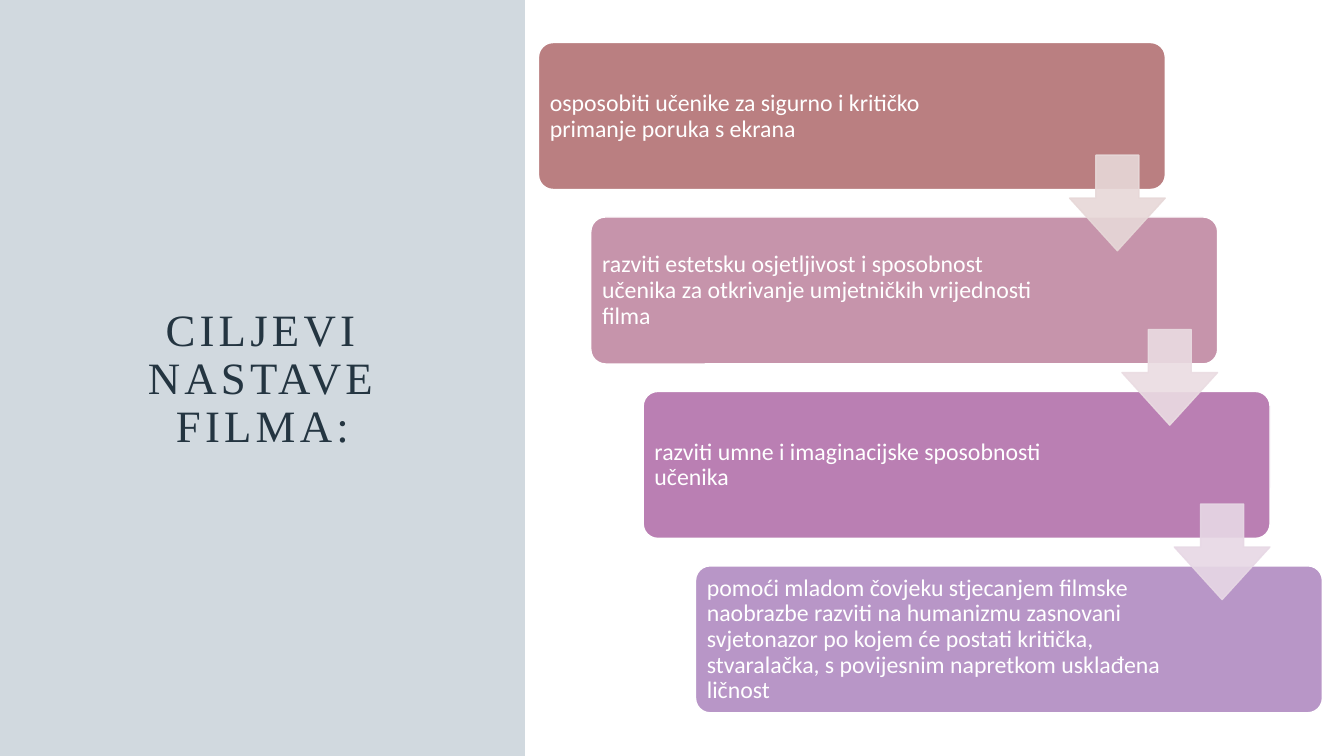
from lxml import etree
from pptx import Presentation
from pptx import util as u
from pptx.dml.color import RGBColor
from pptx.enum import shapes, text
from pptx.oxml import ns

WHITE = RGBColor(0xFF, 0xFF, 0xFF)
SLATE = RGBColor(0x48, 0x6B, 0x83)
INK = RGBColor(0x24, 0x35, 0x41)
ROSE = RGBColor(0xBA, 0x7F, 0x81)
PINK = RGBColor(0xC6, 0x94, 0xAB)
PLUM = RGBColor(0xBA, 0x7F, 0xB3)
LILAC = RGBColor(0xB8, 0x96, 0xC7)
PALE_ROSE = RGBColor(0xE7, 0xD8, 0xD8)
PALE_PINK = RGBColor(0xEA, 0xDC, 0xE2)
PALE_PLUM = RGBColor(0xE7, 0xD8, 0xE5)

GOALS = [
    ("osposobiti učenike za sigurno i kritičko primanje poruka s ekrana", ROSE, 325.4),
    ("razviti estetsku osjetljivost i sposobnost učenika za otkrivanje "
     "umjetničkih vrijednosti filma", PINK, 335.6),
    ("razviti umne i imaginacijske sposobnosti učenika", PLUM, 335.6),
    ("pomoći mladom čovjeku stjecanjem filmske naobrazbe razviti na humanizmu "
     "zasnovani svjetonazor po kojem će postati kritička, stvaralačka, "
     "s povijesnim napretkom usklađena ličnost", LILAC, 335.6),
]
ARROWS = [PALE_ROSE, PALE_PINK, PALE_PLUM]
STEP_X, STEP_Y = 37.4, 124.6


class Deck:
    """Hold the text style and the current slide, and draw its elements."""

    def __init__(self, slide):
        self.slide = slide
        self.body = "Calibri"
        self.head = "Times New Roman"

    def fade(self, fill, alpha):
        for clr in fill._xPr.iter(ns.qn("a:srgbClr")):
            etree.SubElement(clr, ns.qn("a:alpha")).set("val", str(alpha * 1000))

    def shape(self, kind, box, color, line=None, adj=(), alpha=100):
        item = self.slide.shapes.add_shape(kind, *map(u.Pt, box))
        item.shadow.inherit = False
        for i, value in enumerate(adj):
            item.adjustments[i] = value
        item.fill.solid()
        item.fill.fore_color.rgb = color
        if line is None:
            item.line.fill.background()
        else:
            item.line.color.rgb = line
            item.line.width = u.Pt(1)
        if alpha < 100:
            self.fade(item.fill, alpha)
        return item

    def label(self, words, box, font, size, color, inset,
              align=text.PP_ALIGN.LEFT, track=0):
        frame = self.slide.shapes.add_textbox(*map(u.Pt, box)).text_frame
        frame.word_wrap = True
        frame.vertical_anchor = text.MSO_ANCHOR.MIDDLE
        frame.margin_left = frame.margin_right = u.Pt(inset[0])
        frame.margin_top = frame.margin_bottom = u.Pt(inset[1])
        para = frame.paragraphs[0]
        para.alignment = align
        para.line_spacing = 0.9
        run = para.add_run()
        run.text = words
        run.font.name = font
        run.font.size = u.Pt(size)
        run.font.color.rgb = color
        if track:
            run.font._element.set("spc", str(track * 100))

    def title(self, words, box):
        self.label(words, box, self.head, 32, INK, (7.2, 3.6),
                   text.PP_ALIGN.CENTER, 3)

    def goal(self, words, left, top, width, color):
        self.shape(shapes.MSO_SHAPE.ROUNDED_RECTANGLE, (left, top, 447.8, 105),
                   color, WHITE, [0.1])
        self.label(words, (left + 3.1, top + 3.1, width, 99.4),
                   self.body, 17, WHITE, (5, 5))

    def arrow(self, left, top, color):
        self.shape(shapes.MSO_SHAPE.DOWN_ARROW, (left, top, 68.3, 68.3),
                   color, color, [0.45, 0.55], 90)


def main():
    prs = Presentation()
    prs.slide_width, prs.slide_height = u.Pt(960), u.Pt(540)
    deck = Deck(prs.slides.add_slide(prs.slide_layouts[6]))
    deck.shape(shapes.MSO_SHAPE.RECTANGLE, (0, 0, 375, 540), SLATE, alpha=25)
    deck.title("CILJEVI NASTAVE FILMA:", (54, 55.4, 267, 432))
    for i, (words, color, width) in enumerate(GOALS):
        deck.goal(words, 384.6 + i * STEP_X, 30.4 + i * STEP_Y, width, color)
    for i, color in enumerate(ARROWS):
        deck.arrow(764 + i * STEP_X, 110.8 + i * STEP_Y, color)
    prs.save("out.pptx")


if __name__ == "__main__":
    main()
